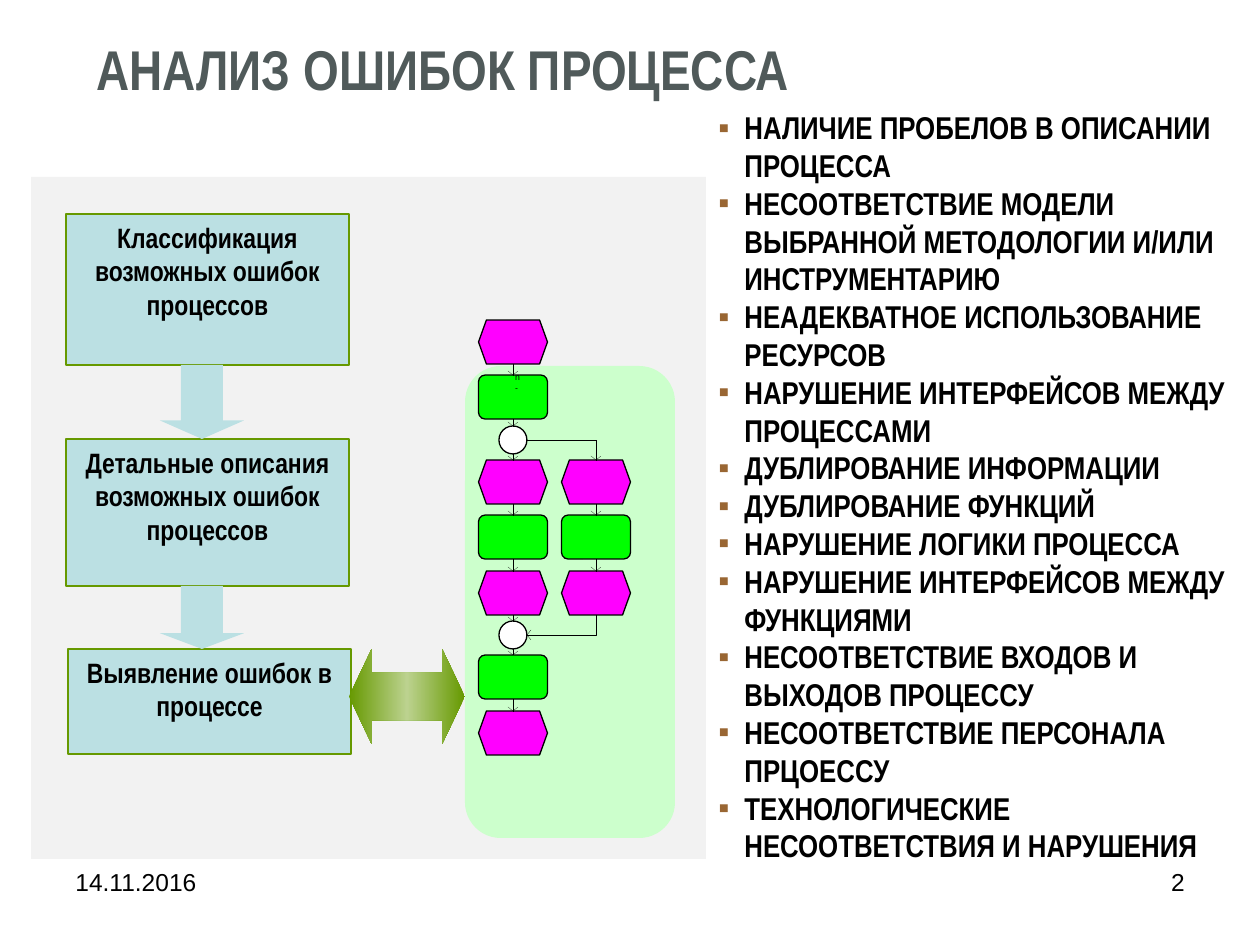
from copy import deepcopy
from itertools import pairwise

from pptx import Presentation
from pptx.dml.color import RGBColor
from pptx.enum.dml import MSO_LINE
from pptx.enum.shapes import MSO_CONNECTOR, MSO_SHAPE
from pptx.enum.text import MSO_ANCHOR, MSO_AUTO_SIZE, PP_ALIGN
from pptx.oxml.ns import qn
from pptx.util import Pt
from lxml import etree

BLACK = RGBColor(0x00, 0x00, 0x00)
WHITE = RGBColor(0xFF, 0xFF, 0xFF)
SLATE = RGBColor(0x50, 0x5A, 0x5A)
GREY = RGBColor(0xF2, 0xF2, 0xF2)
MINT = RGBColor(0xCC, 0xFF, 0xCC)
GREEN = RGBColor(0x00, 0xFF, 0x00)
MAGENTA = RGBColor(0xFF, 0x00, 0xFF)
BLUE = RGBColor(0xBB, 0xE0, 0xE3)
OLIVE = RGBColor(0x66, 0x99, 0x00)
LIGHT_OLIVE = RGBColor(0xBC, 0xD2, 0x8F)

TITLE = "АНАЛИЗ ОШИБОК ПРОЦЕССА"
ERRORS = [
    "НАЛИЧИЕ ПРОБЕЛОВ В ОПИСАНИИ ПРОЦЕССА",
    "НЕСООТВЕТСТВИЕ МОДЕЛИ ВЫБРАННОЙ МЕТОДОЛОГИИ И/ИЛИ ИНСТРУМЕНТАРИЮ",
    "НЕАДЕКВАТНОЕ ИСПОЛЬЗОВАНИЕ РЕСУРСОВ",
    "НАРУШЕНИЕ ИНТЕРФЕЙСОВ МЕЖДУ ПРОЦЕССАМИ",
    "ДУБЛИРОВАНИЕ ИНФОРМАЦИИ",
    "ДУБЛИРОВАНИЕ ФУНКЦИЙ",
    "НАРУШЕНИЕ ЛОГИКИ ПРОЦЕССА",
    "НАРУШЕНИЕ ИНТЕРФЕЙСОВ МЕЖДУ ФУНКЦИЯМИ",
    "НЕСООТВЕТСТВИЕ ВХОДОВ И ВЫХОДОВ ПРОЦЕССУ",
    "НЕСООТВЕТСТВИЕ ПЕРСОНАЛА ПРЦОЕССУ",
    "ТЕХНОЛОГИЧЕСКИЕ НЕСООТВЕТСТВИЯ И НАРУШЕНИЯ",
]
STEPS = [
    ("Классификация возможных ошибок процессов", (66, 214, 283, 151)),
    ("Детальные описания возможных ошибок процессов", (66, 439, 283, 147)),
    ("Выявление ошибок в процессе", (68, 649, 283, 105)),
]
FOOTERS = [("14.11.2016", 63, PP_ALIGN.LEFT), ("2", 903, PP_ALIGN.RIGHT)]

NODES = {
    "event": (MSO_SHAPE.HEXAGON, MAGENTA, 69, 44, 0.18),
    "function": (MSO_SHAPE.ROUNDED_RECTANGLE, GREEN, 69, 44, 0.15),
    "rule": (MSO_SHAPE.OVAL, WHITE, 28, 28, None),
}
MAIN_X, BRANCH_X = 513, 596
FLOW = {
    MAIN_X: [("event", 320), ("function", 375), ("rule", 426), ("event", 460),
             ("function", 515), ("event", 571), ("rule", 621),
             ("function", 655), ("event", 711)],
    BRANCH_X: [("event", 460), ("function", 515), ("event", 571)],
}
BRANCHES = [
    [(527, 440), (BRANCH_X, 440), (BRANCH_X, 460)],
    [(BRANCH_X, 615), (BRANCH_X, 635), (527, 635)],
]

HEADING = {"name": "Arial Narrow", "size": Pt(32), "bold": True}
BULLET = {"name": "Arial Narrow", "size": Pt(18), "bold": True}
STEP = {"name": "Arial Narrow", "size": Pt(16), "bold": True}
FOOTER = {"name": "Arial", "size": Pt(14)}
TINY = {"name": "Arial", "size": Pt(5)}

SCALE = 914400 / 126


def px(*values):
    return [round(v * SCALE) for v in values]


def write(p, text, fmt, color=BLACK, align=PP_ALIGN.LEFT):
    p.alignment = align
    r = p.add_run()
    r.text = text
    for key, value in fmt.items():
        setattr(r.font, key, value)
    r.font.color.rgb = color


def add_text(box):
    tf = s.shapes.add_textbox(*px(*box)).text_frame
    tf.word_wrap = True
    return tf


def add_shape(kind, box, fill, line=None, width=0, adj=()):
    sp = s.shapes.add_shape(kind, *px(*box))
    sp.shadow.inherit = False
    for i, value in enumerate(adj):
        sp.adjustments[i] = value
    sp.fill.solid()
    sp.fill.fore_color.rgb = fill
    if line is None:
        sp.line.fill.background()
    else:
        sp.line.color.rgb = line
        sp.line.width = Pt(width)
    return sp


def dot(line):
    line.color.rgb = BLACK
    line.width = Pt(0.13)
    line.dash_style = MSO_LINE.ROUND_DOT


def add_polyline(points):
    fb = s.shapes.build_freeform(*points[0], scale=SCALE)
    fb.add_line_segments(points[1:], close=False)
    sp = fb.convert_to_shape()
    sp.shadow.inherit = False
    sp.fill.background()
    dot(sp.line)


def add_head(start, tip):
    x, y = tip
    if start[0] == x:
        add_polyline([(x - 5, y - 4), tip, (x + 5, y - 4)])
    else:
        add_polyline([(x + 4, y - 5), tip, (x + 4, y + 5)])


def add_link(x, upper, lower):
    (kind1, y1, node1), (kind2, y2, node2) = upper, lower
    start, tip = (x, y1 + NODES[kind1][3]), (x, y2)
    c = s.shapes.add_connector(MSO_CONNECTOR.STRAIGHT, *px(*start, *tip))
    etree.SubElement(c._element.spPr, qn("a:effectLst"))
    dot(c.line)
    if kind1 == "function":
        c.begin_connect(node1, 2)
    if kind2 == "function":
        c.end_connect(node2, 0)
    add_head(start, tip)


def add_bullet(p):
    pPr = p._p.get_or_add_pPr()
    indent = px(26)[0]
    pPr.set("marL", str(indent))
    pPr.set("indent", str(-indent))
    clr = etree.SubElement(pPr, qn("a:buClr"))
    etree.SubElement(clr, qn("a:srgbClr"), val="996633")
    etree.SubElement(pPr, qn("a:buFont"), typeface="Arial")
    etree.SubElement(pPr, qn("a:buChar"), char="▪")


prs = Presentation()
prs.slide_width, prs.slide_height = px(1260, 945)
s = prs.slides.add_slide(prs.slide_layouts[5])

title = s.shapes.title
title.left, title.top, title.width, title.height = px(84, 26, 1090, 84)
tf = title.text_frame
tf.auto_size = MSO_AUTO_SIZE.NONE
tf.vertical_anchor = MSO_ANCHOR.MIDDLE
write(tf.paragraphs[0], TITLE, HEADING, SLATE)

for text, left, align in FOOTERS:
    write(add_text((left, 861, 294, 66)).paragraphs[0], text, FOOTER, align=align)

add_shape(MSO_SHAPE.RECTANGLE, (31, 177, 675, 682), GREY)
add_shape(MSO_SHAPE.ROUNDED_RECTANGLE, (465, 366, 210, 472), MINT, adj=[0.17])

for x, column in FLOW.items():
    placed = []
    for kind, y in column:
        preset, fill, w, h, adj = NODES[kind]
        node = add_shape(preset, (x - w / 2, y, w, h), fill, BLACK,
                         adj=[] if adj is None else [adj])
        placed.append((kind, y, node))
    for upper, lower in pairwise(placed):
        add_link(x, upper, lower)
for points in BRANCHES:
    add_polyline(points)
    add_head(*points[-2:])

tf = add_text((515, 372, 7, 10))
tf.margin_left = tf.margin_right = tf.margin_top = tf.margin_bottom = 0
write(tf.paragraphs[0], "n-", TINY)

for text, box in STEPS:
    tf = add_shape(MSO_SHAPE.RECTANGLE, box, BLUE, OLIVE, 0.75).text_frame
    tf.word_wrap = True
    tf.vertical_anchor = MSO_ANCHOR.TOP
    write(tf.paragraphs[0], text, STEP, align=PP_ALIGN.CENTER)
for (_, (_, top, _, height)), (_, (_, below, _, _)) in pairwise(STEPS):
    bottom = top + height
    add_shape(MSO_SHAPE.DOWN_ARROW, (160, bottom, 84, below - bottom), BLUE,
              adj=[0.5, 0.25])

arrow = add_shape(MSO_SHAPE.LEFT_RIGHT_ARROW, (349, 649, 116, 95), OLIVE,
                  adj=[0.5, 0.24])
arrow.fill.gradient()
arrow.fill.gradient_angle = 0
stops = arrow._element.spPr.find(".//" + qn("a:gsLst"))
stops.insert(1, deepcopy(stops[0]))
for stop, position, color in zip(arrow.fill.gradient_stops, (0, 0.5, 1),
                                 (OLIVE, LIGHT_OLIVE, OLIVE)):
    stop.position = position
    stop.color.rgb = color

tf = add_text((706, 102, 546, 674))
for i, text in enumerate(ERRORS):
    p = tf.add_paragraph() if i else tf.paragraphs[0]
    add_bullet(p)
    write(p, text, BULLET)

prs.save("out.pptx")
